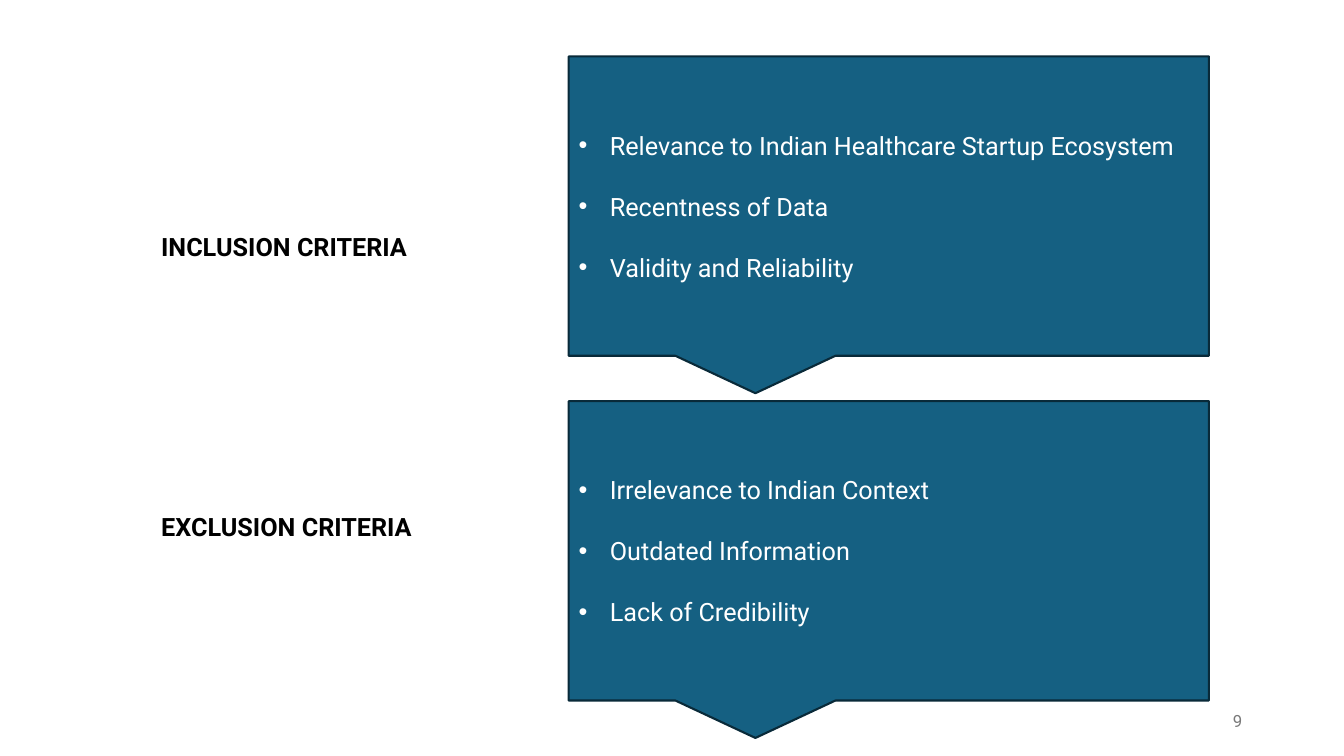
from pptx import Presentation
from pptx.dml.color import RGBColor
from pptx.enum.shapes import MSO_SHAPE as Shape
from pptx.enum.text import MSO_ANCHOR as Anchor, PP_ALIGN as Align
from pptx.oxml.xmlchemy import OxmlElement as Node
from pptx.util import Inches, Pt

FONT = "Roboto"
INDENT = Inches(0.31)
CRITERIA = [
    ("INCLUSION CRITERIA", 2.25, 0.56, [
        "Relevance to Indian Healthcare Startup Ecosystem",
        "Recentness of Data",
        "Validity and Reliability"]),
    ("EXCLUSION CRITERIA", 5.02, 3.98, [
        "Irrelevance to Indian Context",
        "Outdated Information",
        "Lack of Credibility"]),
]


def color(code):
    return RGBColor.from_string(code)


def write(para, text, size, code, bold=False):
    run = para.add_run()
    run.text = text
    font = run.font
    font.name, font.size, font.bold = FONT, Pt(size), bold
    font.color.rgb = color(code)


def bullet(para):
    props = para._p.get_or_add_pPr()
    props.set("marL", str(INDENT))
    props.set("indent", str(-INDENT))
    face = Node("a:buFont")
    face.set("typeface", "Arial")
    mark = Node("a:buChar")
    mark.set("char", "•")
    props.extend([face, mark])


def add_label(slide, box, text, size, code, bold=False,
              align=Align.LEFT, anchor=Anchor.TOP):
    frame = slide.shapes.add_textbox(*map(Inches, box)).text_frame
    frame.word_wrap = True
    frame.vertical_anchor = anchor
    para = frame.paragraphs[0]
    para.alignment = align
    write(para, text, size, code, bold)


def add_callout(slide, box, items):
    """Place a callout holding a bulleted list."""
    shape = slide.shapes.add_shape(Shape.RECTANGULAR_CALLOUT, *map(Inches, box))
    shape.shadow.inherit = False
    shape.fill.solid()
    shape.fill.fore_color.rgb = color("156082")
    shape.line.color.rgb = color("092A39")
    shape.line.width = Pt(1.5)
    frame = shape.text_frame
    frame.word_wrap = True
    frame.vertical_anchor = Anchor.MIDDLE
    for i, item in enumerate(items):
        para = frame.paragraphs[0] if i == 0 else frame.add_paragraph()
        para.alignment = Align.LEFT
        if i:
            para.space_before = Pt(22)
        bullet(para)
        write(para, item, 18, "FFFFFF")


def main():
    deck = Presentation()
    deck.slide_width, deck.slide_height = Inches(13.33), Inches(7.5)
    slide = deck.slides.add_slide(deck.slide_layouts[6])
    add_label(slide, (9.42, 6.95, 3, 0.4), "9", 12, "797979",
              align=Align.RIGHT, anchor=Anchor.MIDDLE)
    for title, label_top, top, items in CRITERIA:
        add_callout(slide, (5.64, top, 6.35, 2.97), items)
        add_label(slide, (1.5, label_top, 4.14, 0.4), title, 18, "000000", True)
    deck.save("out.pptx")


if __name__ == "__main__":
    main()
